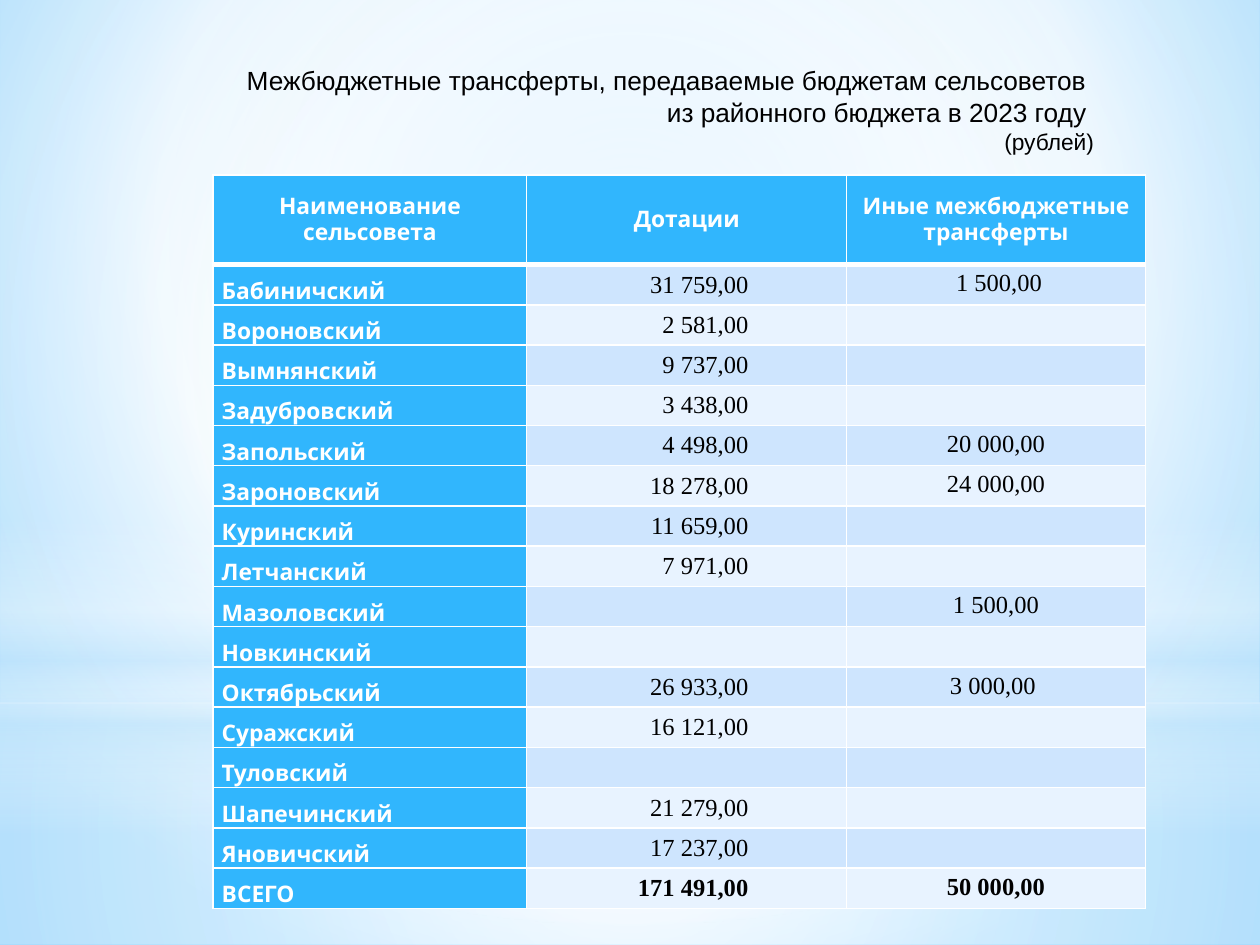
from pptx import Presentation
from pptx.dml.color import RGBColor
from pptx.enum.shapes import MSO_SHAPE as Shape
from pptx.enum.text import MSO_ANCHOR as Anchor, PP_ALIGN as Align
from pptx.oxml.ns import qn
from pptx.util import Inches, Pt
from lxml.etree import SubElement as Sub

WHITE, BLACK, BLUE, PALE = "FFFFFF", "000000", "31B6FD", "C6E7FC"
BANDS = ["CEE5FE", "E8F3FF"]
HEADS = ["Наименование сельсовета", "Дотации", "Иные межбюджетные трансферты"]
ROWS = [
    ("Бабиничский", "31 759,00", "\u00a01 500,00".replace("\u00a0", " ")),
    ("Вороновский", "2 581,00", ""),
    ("Вымнянский", "9 737,00", ""),
    ("Задубровский", "3 438,00", ""),
    ("Запольский", "4 498,00", "20 000,00"),
    ("Зароновский", "18 278,00", "24 000,00"),
    ("Куринский", "11 659,00", ""),
    ("Летчанский", "7 971,00", ""),
    ("Мазоловский", "", "1 500,00"),
    ("Новкинский", "", ""),
    ("Октябрьский", "26 933,00", "3 000,00 "),
    ("Суражский", "16 121,00", ""),
    ("Туловский", "", ""),
    ("Шапечинский", "21 279,00", ""),
    ("Яновичский", "17 237,00", ""),
    ("ВСЕГО", "171 491,00", "50 000,00"),
]


def color(code):
    """Turn a hex string into a colour."""
    return RGBColor.from_string(code)


def style(par, size, face, code, bold=False, align=None):
    """Set the font and alignment of a paragraph."""
    font = par.font
    font.size, font.name, font.bold = Pt(size), face, bold
    font.color.rgb = color(code)
    par.alignment = align


def blend(fill, host, stops, to=None):
    """Fill with a gradient, round about the box 'to' or else downward."""
    fill.gradient()
    grad = host.find(".//" + qn("a:gradFill"))
    for part in list(grad):
        grad.remove(part)
    items = Sub(grad, qn("a:gsLst"))
    for pos, code, alpha in stops:
        stop = Sub(items, qn("a:gs"), pos=str(pos * 1000))
        tint = Sub(stop, qn("a:srgbClr"), val=code)
        if alpha < 100:
            Sub(tint, qn("a:alpha"), val=str(alpha * 1000))
    if to:
        ring = Sub(grad, qn("a:path"), path="circle")
        sides = {side: str(val * 1000) for side, val in zip("ltrb", to)}
        Sub(ring, qn("a:fillToRect"), **sides)
    else:
        Sub(grad, qn("a:lin"), ang="5400000", scaled="0")


def glow(slide, kind, top, high, stops, to=None):
    """Draw one translucent layer across the slide."""
    layer = slide.shapes.add_shape(kind, 0, Inches(top), Inches(10), Inches(high))
    layer.shadow.inherit = False
    layer.line.fill.background()
    blend(layer.fill, layer._element.spPr, stops, to)


def backdrop(slide):
    """Paint the background and its layers of light."""
    mid = (50, 50, 50, 50)
    base = [(0, "B0E0FF", 100), (60, WHITE, 100), (100, "6BC5FF", 100)]
    blend(slide.background.fill, slide._element, base, (20, 10, 20, 60))
    glow(slide, Shape.RECTANGLE, 5.58, 1.92,
         [(0, WHITE, 91), (37, WHITE, 76), (100, PALE, 79)], mid)
    glow(slide, Shape.RECTANGLE, 0, 5.58,
         [(0, WHITE, 89), (48, WHITE, 62), (100, PALE, 79)], mid)
    glow(slide, Shape.RECTANGLE, 4.12, 2.5,
         [(0, WHITE, 0), (29, WHITE, 30), (45, PALE, 40),
          (55, WHITE, 26), (65, PALE, 60), (100, WHITE, 0)])
    glow(slide, Shape.OVAL, 1.75, 5.58, [(0, WHITE, 100), (56, WHITE, 0)], mid)


def title(slide, left, top, wide, high):
    """Write the heading and the unit line."""
    box = slide.shapes.add_textbox(*map(Inches, (left, top, wide, high)))
    frame = box.text_frame
    frame.word_wrap, frame.vertical_anchor = True, Anchor.MIDDLE
    frame.text = ("Межбюджетные трансферты, передаваемые бюджетам сельсоветов \n"
                  "из районного бюджета в 2023 году \n(рублей)")
    for par, size in zip(frame.paragraphs, (15, 15, 13)):
        style(par, size, "Arial", BLACK, align=Align.RIGHT)


def border(cell, row):
    """Draw white cell borders, thick below the header."""
    thick = {0: "B", 1: "T"}.get(row)
    for side in "LRTB":
        width = Pt(3 if side == thick else 1)
        line = Sub(cell._tc.get_or_add_tcPr(), qn("a:ln" + side), w=str(width))
        Sub(Sub(line, qn("a:solidFill")), qn("a:srgbClr"), val=WHITE)


def write(cell, text, row, col):
    """Fill and write one cell according to its row and column."""
    label = row == 0 or col == 0
    border(cell, row)
    cell.fill.solid()
    cell.fill.fore_color.rgb = color(BLUE if label else BANDS[(row - 1) % 2])
    cell.margin_left = cell.margin_right = Inches(0.07)
    cell.margin_top = cell.margin_bottom = 0
    cell.vertical_anchor = Anchor.MIDDLE if row == 0 or col else Anchor.BOTTOM
    cell.text = text
    par = cell.text_frame.paragraphs[0]
    if label:
        style(par, 13, "Karla", WHITE, True, Align.LEFT if row else Align.CENTER)
        return
    style(par, 14, "Times New Roman", BLACK, row == len(ROWS),
          Align.RIGHT if col == 1 else Align.CENTER)
    if col == 1:
        cell.margin_right = Inches(0.78)
    else:
        par.line_spacing = Pt(14)


def grid(slide, left, top, wide, high):
    """Build the table of transfers."""
    data = [HEADS, *ROWS]
    box = map(Inches, (left, top, wide, high))
    table = slide.shapes.add_table(len(data), len(HEADS), *box).table
    for col, width in zip(table.columns, (2.49, 2.54, wide - 5.03)):
        col.width = Inches(width)
    head = 0.71
    for row, line in enumerate(data):
        step = (high - head) / len(ROWS) if row else head
        table.rows[row].height = Inches(step)
        for col, text in enumerate(line):
            write(table.cell(row, col), text, row, col)


def main():
    """Build and save the slide."""
    deck = Presentation()
    deck.slide_width, deck.slide_height = Inches(10), Inches(7.5)
    slide = deck.slides.add_slide(deck.slide_layouts[6])
    backdrop(slide)
    grid(slide, 1.69, 1.39, 7.4, 5.82)
    title(slide, 1.45, 0.46, 7.33, 0.82)
    deck.save("out.pptx")


if __name__ == "__main__":
    main()
